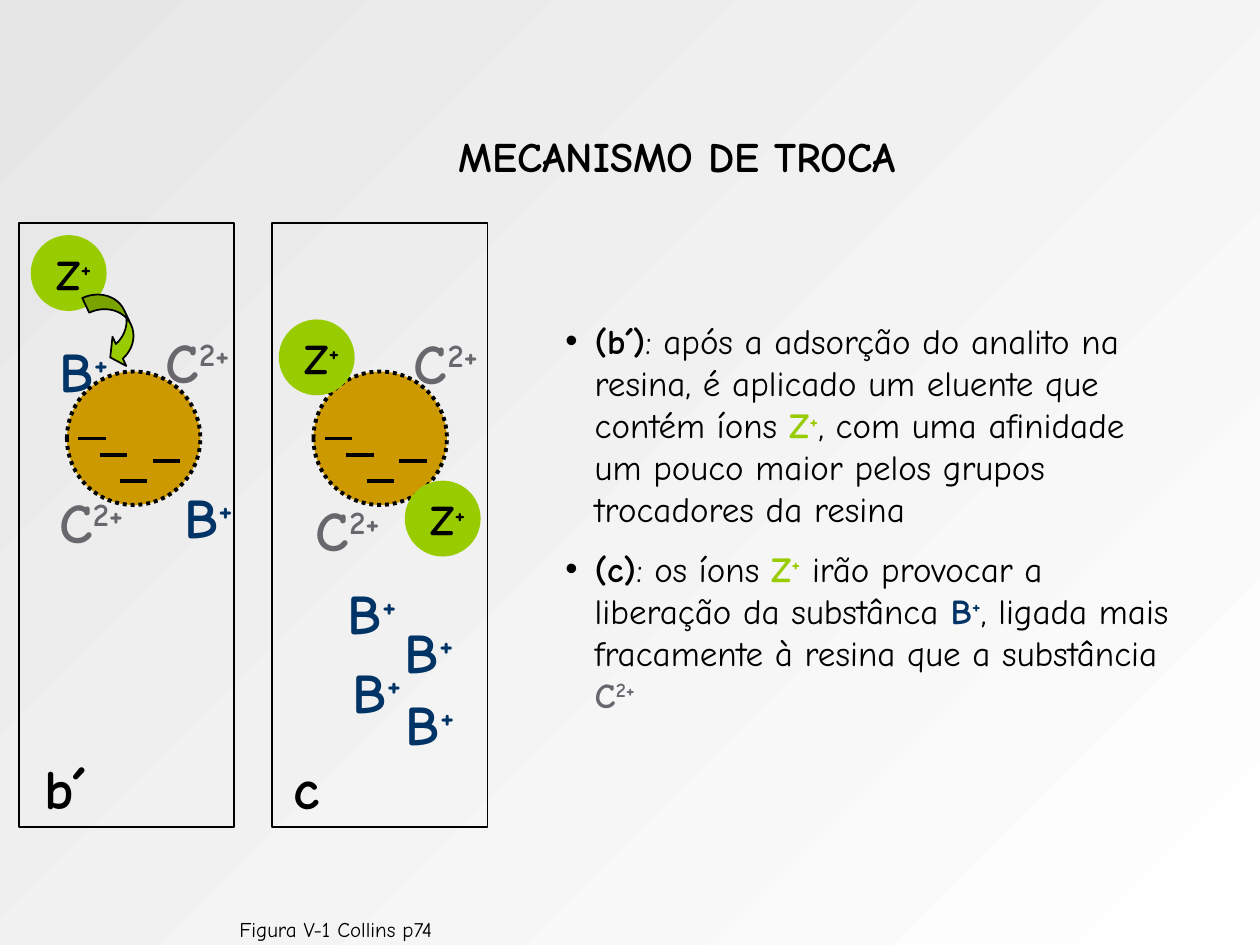
from lxml.etree import SubElement
from pptx import Presentation
from pptx.dml.color import RGBColor
from pptx.enum.dml import MSO_LINE
from pptx.enum.shapes import MSO_CONNECTOR, MSO_SHAPE
from pptx.enum.text import MSO_ANCHOR, MSO_AUTO_SIZE, PP_ALIGN
from pptx.oxml.ns import qn
from pptx.util import Cm, Pt

BLACK = RGBColor(0x00, 0x00, 0x00)
WHITE = RGBColor(0xFF, 0xFF, 0xFF)
PALE = RGBColor(0xE6, 0xE6, 0xE6)
GREEN = RGBColor(0x99, 0xCC, 0x00)
OCHRE = RGBColor(0xCC, 0x99, 0x00)
NAVY = RGBColor(0x00, 0x33, 0x66)
GREY = RGBColor(0x69, 0x67, 0x6D)
FACE = "Comic Neue"

Z = [("Z", GREEN, True, False), ("+", GREEN, True, True)]
B = [("B", NAVY, True, False), ("+", NAVY, True, True)]
C = [("C", GREY, True, False), ("2+", GREY, True, True)]


def word(text, bold=False):
    """Describe a plain black run."""
    return (text, BLACK, bold, False)


def put(target, form):
    """Set each attribute named in the dict."""
    for name, value in form.items():
        setattr(target, name, value)


def write(para, runs, size):
    """Add formatted runs to a paragraph."""
    for text, color, bold, raised in runs:
        run = para.add_run()
        run.text = text
        put(run.font, {"name": FACE, "size": Pt(size), "bold": bold})
        run.font.color.rgb = color
        if raised:
            run.font._element.set("baseline", "30000")


def add_text(shapes, place, runs, size):
    """Add a centred text box and return its frame."""
    frame = shapes.add_textbox(*map(Cm, place)).text_frame
    put(frame, {"word_wrap": True, "auto_size": MSO_AUTO_SIZE.SHAPE_TO_FIT_TEXT})
    frame.paragraphs[0].alignment = PP_ALIGN.CENTER
    write(frame.paragraphs[0], runs, size)
    return frame


def add_form(shapes, kind, place, fill, edge, width):
    """Add a preset shape with its fill and line."""
    shape = shapes.add_shape(kind, *map(Cm, place))
    shape.shadow.inherit = False
    if fill is None:
        shape.fill.background()
    else:
        shape.fill.solid()
        shape.fill.fore_color.rgb = fill
    shape.line.color.rgb = edge
    shape.line.width = Pt(width)
    return shape


def add_dash(shapes, x, y):
    """Add one negative charge mark."""
    ends = map(Cm, (x, y, x + 0.55, y))
    line = shapes.add_connector(MSO_CONNECTOR.STRAIGHT, *ends)
    line.line.color.rgb = BLACK
    line.line.width = Pt(2.25)
    SubElement(line._element.spPr, qn("a:effectLst"))


def add_bead(slide, x, y):
    """Add a resin bead with its four charges."""
    shapes = slide.shapes.add_group_shape().shapes
    bead = add_form(shapes, MSO_SHAPE.OVAL, (x, y, 2.69, 2.69), OCHRE, BLACK, 2.25)
    bead.line.dash_style = MSO_LINE.ROUND_DOT
    for dx, dy in ((1.73, 1.8), (1.07, 2.21), (0.66, 1.68), (0.23, 1.35)):
        add_dash(shapes, x + dx, y + dy)


def add_ion(slide, x, y):
    """Add a green eluent ion with its label."""
    shapes = slide.shapes.add_group_shape().shapes
    add_form(shapes, MSO_SHAPE.OVAL, (x, y, 1.45, 1.45), GREEN, GREEN, 2.25)
    label = [(text, BLACK, bold, raised) for text, _, bold, raised in Z]
    add_text(shapes, (x + 0.07, y + 0.1, 1.52, 1.27), label, 24)


def add_arrow(slide):
    """Add the curved arrow from ion to bead."""
    place = (1.98, 5.79, 0.66, 1.65)
    kind = MSO_SHAPE.CURVED_LEFT_ARROW
    arrow = add_form(slide.shapes, kind, place, GREEN, BLACK, 1)
    arrow.rotation = 334.8
    for rank, value in enumerate((0.495, 0.989, 0.333)):
        arrow.adjustments[rank] = value


def add_title(slide):
    """Place and format the title."""
    title = slide.shapes.title
    put(title, dict(zip(("left", "top", "width", "height"),
                        map(Cm, (1.9, 1.42, 23.5, 3.45)))))
    frame = title.text_frame
    put(frame, {"vertical_anchor": MSO_ANCHOR.MIDDLE, "word_wrap": True,
                "auto_size": MSO_AUTO_SIZE.NONE})
    frame.paragraphs[0].alignment = PP_ALIGN.CENTER
    write(frame.paragraphs[0], [word("MECANISMO DE TROCA", True)], 24)


def add_list(slide, place, items):
    """Add the bulleted explanation."""
    frame = add_text(slide.shapes, place, [], 20)
    for rank, runs in enumerate(items):
        para = frame.add_paragraph() if rank else frame.paragraphs[0]
        put(para, {"alignment": PP_ALIGN.LEFT, "space_before": Pt(10 if rank else 0)})
        props = para._p.get_or_add_pPr()
        props.set("marL", str(Cm(0.59)))
        props.set("indent", str(-Cm(0.59)))
        SubElement(props, qn("a:buFont"), typeface="Arial")
        SubElement(props, qn("a:buChar"), char="•")
        write(para, runs, 20)


def add_back(slide):
    """Fill the background with a diagonal gradient."""
    fill = slide.background.fill
    fill.gradient()
    fill.gradient_angle = 135
    for stop, color, spot in zip(fill.gradient_stops, (WHITE, PALE), (0, 1)):
        stop.color.rgb = color
        stop.position = spot


def main():
    """Build the slide and save it."""
    deck = Presentation()
    put(deck, {"slide_width": Cm(25.4), "slide_height": Cm(19.05)})
    slide = deck.slides.add_slide(deck.slide_layouts[5])
    shapes = slide.shapes
    add_back(slide)
    add_title(slide)
    note = add_text(shapes, (1.65, 18.47, 10.24, 0.51),
                    [word("Figura V-1 Collins p74")], 12)
    put(note, dict.fromkeys(("margin_left", "margin_top",
                             "margin_right", "margin_bottom"), 0))
    add_ion(slide, 0.66, 4.78)
    for x in (0.38, 5.49):
        add_form(shapes, MSO_SHAPE.RECTANGLE, (x, 4.5, 4.34, 12.17), None, BLACK, 1)
    for x in (1.35, 6.32):
        add_bead(slide, x, 7.49)
    for x, y, width in ((2.9, 6.48, 2.16), (0.71, 9.7, 2.26),
                        (5.89, 9.86, 2.24), (7.82, 6.5, 2.34)):
        add_text(shapes, (x, y, width, 1.6), C, 32)
    for x, y in ((0.74, 6.65), (3.25, 9.6), (6.55, 11.53),
                 (6.65, 13.13), (7.7, 12.32), (7.72, 13.77)):
        add_text(shapes, (x, y, 1.9, 1.6), B, 32)
    for x, y in ((5.66, 6.48), (8.2, 9.73)):
        add_ion(slide, x, y)
    add_arrow(slide)
    for x, width, text in ((0.36, 1.88, "b´"), (5.51, 1.35, "c")):
        add_text(shapes, (x, 15.06, width, 1.6), [word(text, True)], 32)
    add_list(slide, (11.15, 6.32, 12.73, 8.31), [
        [word("(b´)", True),
         word(": após a adsorção do analito na resina, é aplicado um eluente "
              "que contém íons "), *Z,
         word(", com uma afinidade um pouco maior pelos grupos trocadores da resina")],
        [word("(c)", True), word(": os íons "), *Z,
         word(" irão provocar a liberação da substânca "), *B,
         word(", ligada mais fracamente à resina que a substância "), *C],
    ])
    deck.save("out.pptx")


if __name__ == "__main__":
    main()
